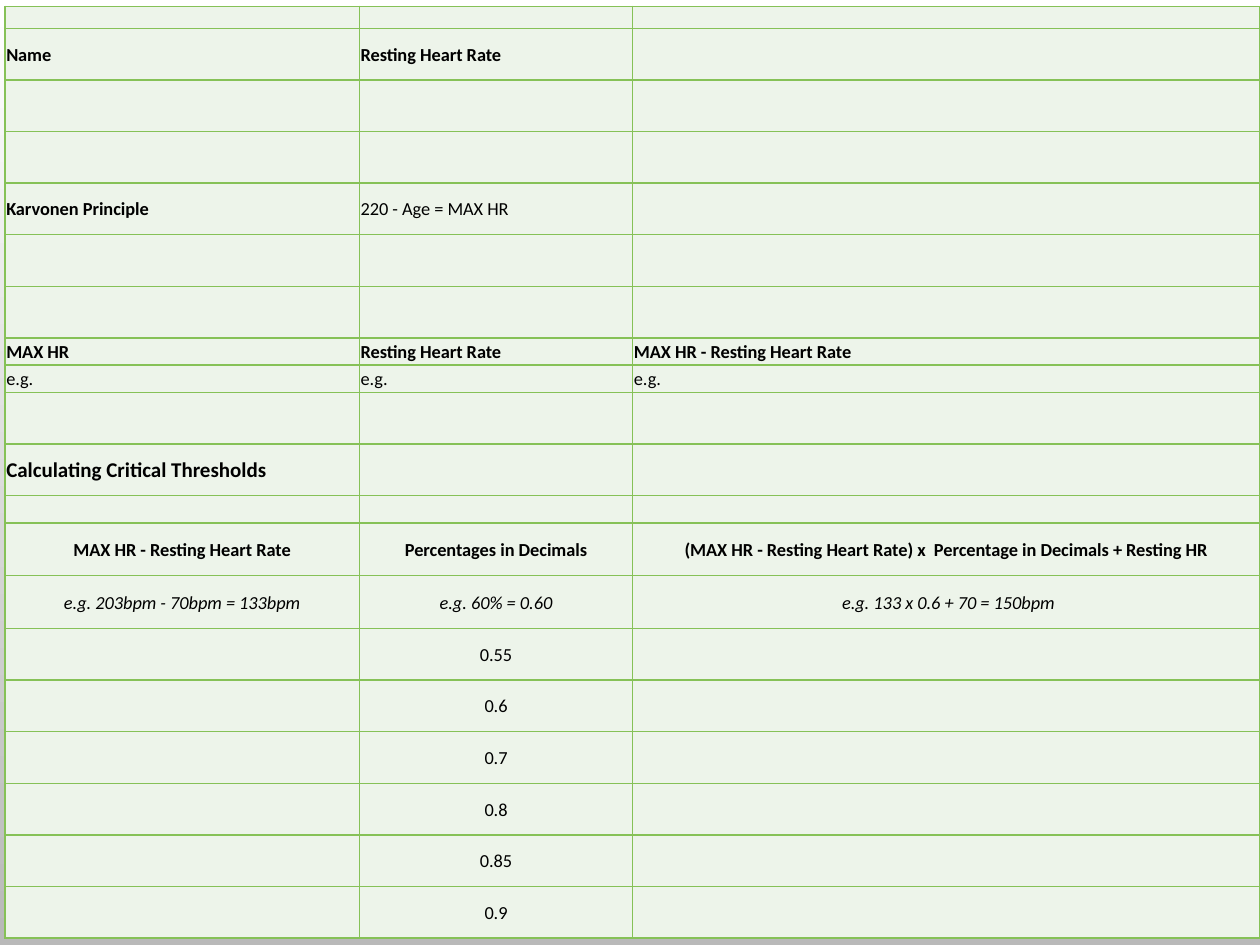
from dataclasses import dataclass

from lxml.etree import SubElement as Sub
from pptx import Presentation
from pptx.dml.color import RGBColor as RGB
from pptx.enum.text import MSO_ANCHOR as Anchor, PP_ALIGN as Align
from pptx.oxml.ns import qn
from pptx.util import Pt


@dataclass(frozen=True)
class Theme:
    font: str = "Calibri"
    body: float = 10.5
    head: float = 12
    blank: float = 8
    ink: str = "000000"
    fill: str = "EDF4EA"
    line: str = "86C157"
    top: str = "FFFFFF"
    base: str = "B9B9B9"


LOOK = Theme()
COLS = (202.5, 156.2, 358.5)
TALL, MID, LOW, SLIM = 29.5, 30.2, 15.6, 12.6
RATES = ("0.55", "0.6", "0.7", "0.8", "0.85", "0.9")
GAP = (TALL, "", ())
ROWS = [
    (SLIM, "", ()),
    (TALL, "b", ("Name", "Resting Heart Rate")),
    GAP,
    GAP,
    (TALL, "k", ("Karvonen Principle", "220 - Age = MAX HR")),
    GAP,
    GAP,
    (LOW, "b", ("MAX HR", "Resting Heart Rate", "MAX HR - Resting Heart Rate")),
    (LOW, "", ("e.g.",) * 3),
    GAP,
    (TALL, "bh", ("Calculating Critical Thresholds",)),
    (LOW, "", ()),
    (MID, "bc", (
        "MAX HR - Resting Heart Rate",
        "Percentages in Decimals",
        "(MAX HR - Resting Heart Rate) x  Percentage in Decimals + Resting HR",
    )),
    (MID, "ic", (
        "e.g. 203bpm - 70bpm = 133bpm",
        "e.g. 60% = 0.60",
        " e.g. 133 x 0.6 + 70 = 150bpm",
    )),
    *((TALL, "c", ("", rate)) for rate in RATES),
]


def shade(slide):
    fill = slide.background.fill
    fill.gradient()
    fill.gradient_angle = 270
    for stop, tint, spot in zip(fill.gradient_stops, (LOOK.top, LOOK.base), (0, 1)):
        stop.color.rgb = RGB.from_string(tint)
        stop.position = spot


def edge(cell):
    prop = cell._tc.get_or_add_tcPr()
    for spot, side in enumerate("LRTB"):
        line = Sub(prop, qn(f"a:ln{side}"), w=str(Pt(1)))
        Sub(Sub(line, qn("a:solidFill")), qn("a:srgbClr"), val=LOOK.line)
        prop.insert(spot, line)


def write(cell, text, kind, bold):
    para = cell.text_frame.paragraphs[0]
    if not text:
        Sub(para._p, qn("a:endParaRPr"), sz=str(int(LOOK.blank * 100)))
        return
    para.text = text
    para.alignment = Align.CENTER if "c" in kind else Align.LEFT
    font = para.font
    font.name = LOOK.font
    font.size = Pt(LOOK.head if "h" in kind else LOOK.body)
    font.bold = bold
    font.italic = "i" in kind
    font.color.rgb = RGB.from_string(LOOK.ink)


def style(cell):
    cell.fill.solid()
    cell.fill.fore_color.rgb = RGB.from_string(LOOK.fill)
    cell.vertical_anchor = Anchor.MIDDLE
    cell.margin_left = cell.margin_right = cell.margin_top = Pt(0.7)
    cell.margin_bottom = Pt(0)
    edge(cell)


def grid(slide):
    high = sum(row[0] for row in ROWS)
    frame = slide.shapes.add_table(
        len(ROWS), len(COLS), Pt(2.9), Pt(3.6), Pt(sum(COLS)), Pt(high)
    )
    table = frame.table
    table.first_row = table.horz_banding = False
    for col, wide in zip(table.columns, COLS):
        col.width = Pt(wide)
    for row, (tall, kind, words) in zip(table.rows, ROWS):
        row.height = Pt(tall)
        for num, cell in enumerate(row.cells):
            style(cell)
            text = words[num] if num < len(words) else ""
            write(cell, text, kind, "b" in kind or ("k" in kind and num == 0))


def main():
    """Build the heart rate worksheet slide."""
    deck = Presentation()
    deck.slide_width, deck.slide_height = Pt(720), Pt(540)
    slide = deck.slides.add_slide(deck.slide_layouts[6])
    shade(slide)
    grid(slide)
    deck.save("out.pptx")


if __name__ == "__main__":
    main()
